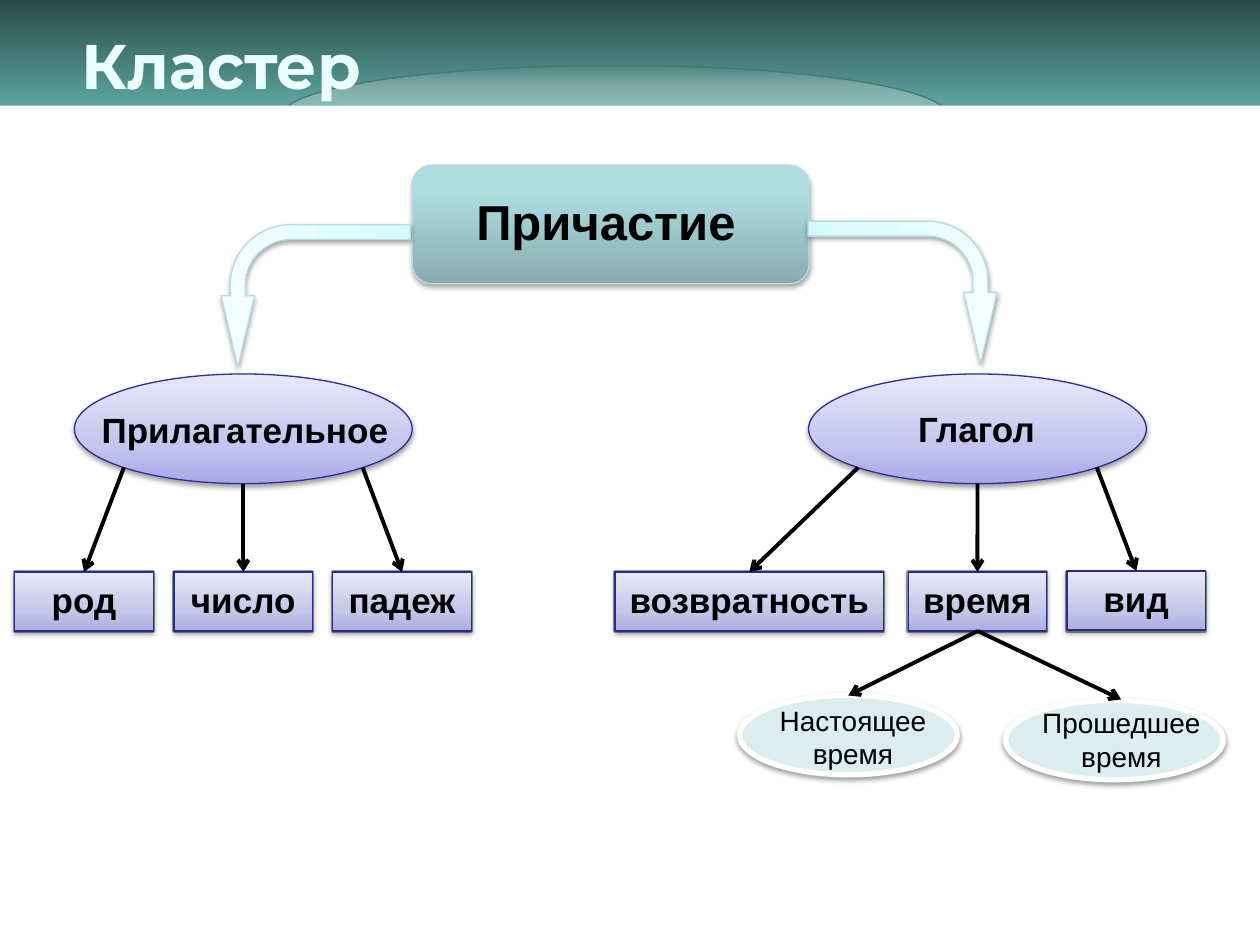
from dataclasses import dataclass
from math import sqrt

from lxml import etree
from pptx import Presentation
from pptx import util as u
from pptx.dml.color import RGBColor
from pptx.enum import shapes, text
from pptx.oxml.ns import qn

Cm, Pt = u.Cm, u.Pt
G = shapes.MSO_SHAPE


@dataclass(frozen=True)
class Theme:
    white: str = "FFFFFF"
    ink: str = "000000"
    title: str = "EBFFFF"
    body_font: str = "Arial"
    title_font: str = "Montserrat"
    title_size: float = 36
    root_size: float = 28
    node_size: float = 20
    leaf_size: float = 16
    banner: tuple = ((0, "2A4C49"), (100, "5CA49D"))
    glow: tuple = ((0, "49837D"), (50, "FFFFFF", 15), (100, "49837D"))
    glow_line: str = "457B76"
    root: tuple = ((0, "87ABAE"), (80, "AFDEE2"), (100, "AFE0E4"))
    pale_line: str = "B6DCDF"
    oval: tuple = ((0, "A9A9E9"), (35, "C4C4EF"), (100, "E8E8FA"))
    oval_line: str = "2F2F98"
    box: tuple = ((0, "ADADE1"), (35, "C6C6E9"), (100, "E9E9F7"))
    box_line: str = "2A2A89"
    back: str = "BBE0E3"
    back_line: str = "8AA6A8"
    leaf: str = "DAEDEF"
    arrow: tuple = ((0, "D3FBFF"), (35, "DFFCFF"), (100, "F2FEFF"))


T = Theme()
OVAL_Y, OVAL_W, OVAL_H = 7.54, 6.81, 2.21
BOX_Y, BOX_W, BOX_H = 11.53, 2.79, 1.19


def sub(parent, tag, **attrs):
    el = etree.SubElement(parent, qn(tag))
    for key, value in attrs.items():
        el.set(key, str(value))
    return el


def add_color(parent, rgb, opacity=100):
    clr = sub(parent, "a:srgbClr", val=rgb)
    if opacity < 100:
        sub(clr, "a:alpha", val=opacity * 1000)


def set_gradient(sp, stops, angle):
    sp.fill.gradient()
    grad = sp.element.spPr.find(qn("a:gradFill"))
    for child in list(grad):
        grad.remove(child)
    grad.set("rotWithShape", "1")
    stop_list = sub(grad, "a:gsLst")
    for pos, *color in stops:
        add_color(sub(stop_list, "a:gs", pos=pos * 1000), *color)
    sub(grad, "a:lin", ang=angle * 60000, scaled=0)


def add_shape(s, kind, at, fill, line=None, width=0.75, angle=270, shadow=None):
    sp = s.shapes.add_shape(kind, *map(Cm, at))
    if isinstance(fill, str):
        sp.fill.solid()
        sp.fill.fore_color.rgb = RGBColor.from_string(fill)
    else:
        set_gradient(sp, fill, angle)
    if line:
        sp.line.color.rgb = RGBColor.from_string(line)
        sp.line.width = Pt(width)
    else:
        sp.line.fill.background()
    sp.shadow.inherit = False
    if shadow:
        opacity, distance = shadow
        effects = sp.element.spPr.find(qn("a:effectLst"))
        outer = sub(effects, "a:outerShdw", blurRad=Pt(3.1), dist=Pt(distance),
                    dir=90 * 60000, rotWithShape=0)
        add_color(outer, T.ink, opacity)
    return sp


def write(sp, words, size, bold=True, font=T.body_font, color=T.ink):
    tf = sp.text_frame
    frame = {"word_wrap": True, "vertical_anchor": text.MSO_ANCHOR.TOP,
             "auto_size": text.MSO_AUTO_SIZE.NONE,
             "margin_left": Cm(0.2), "margin_right": Cm(0.2),
             "margin_top": Cm(0.13), "margin_bottom": Cm(0.13)}
    for key, value in frame.items():
        setattr(tf, key, value)
    p = tf.paragraphs[0]
    p.alignment = text.PP_ALIGN.CENTER
    r = p.add_run()
    r.text = words
    for key, value in {"name": font, "size": Pt(size), "bold": bold}.items():
        setattr(r.font, key, value)
    r.font.color.rgb = RGBColor.from_string(color)


def add_label(s, words, at, size, bold=True):
    write(s.shapes.add_textbox(*map(Cm, at)), words, size, bold)


def add_arrow(s, start, end):
    c = s.shapes.add_connector(shapes.MSO_CONNECTOR.STRAIGHT, *map(Cm, start + end))
    c.line.color.rgb = RGBColor.from_string(T.ink)
    c.line.width = Pt(2.25)
    sub(c.element.spPr.find(qn("a:ln")), "a:tailEnd", type="arrow")
    sub(c.element.spPr, "a:effectLst")


def add_header(s):
    add_shape(s, G.RECTANGLE, (0, 0, 25.4, 2.13), T.banner, angle=90)
    add_shape(s, G.OVAL, (5.69, 1.32, 13.41, 2.01), T.glow, T.glow_line, angle=90)
    add_shape(s, G.RECTANGLE, (0, 2.13, 25.4, 16.92), T.white)
    title = s.shapes.title
    title.element.getparent().append(title.element)
    place = {"left": 1.26, "top": 0.41, "width": 6.4, "height": 1.6}
    for key, value in place.items():
        setattr(title, key, Cm(value))
    write(title, "Кластер", T.title_size, font=T.title_font, color=T.title)


def add_bent_arrow(s, left, top, rotation, flip=False):
    sp = add_shape(s, G.BENT_ARROW, (left, top, 2.87, 3.81), T.arrow,
                   T.pale_line, shadow=(38, 1.6))
    for i, value in enumerate((0.105, 0.117, 0.5, 0.425)):
        sp.adjustments[i] = value
    sp.rotation = rotation
    if flip:
        sp.element.spPr.xfrm.set("flipH", "1")


def add_box(s, words, left, width=BOX_W, top=BOX_Y):
    add_shape(s, G.RECTANGLE, (left, BOX_Y, width, BOX_H), T.back, T.back_line, 2)
    sp = add_shape(s, G.RECTANGLE, (left, top, width, BOX_H), T.box, T.box_line,
                   shadow=(38, 1.6))
    write(sp, words, T.node_size)
    return left + width / 2, top


def add_branch(s, words, left, label_at, boxes):
    add_shape(s, G.OVAL, (left, OVAL_Y, OVAL_W, OVAL_H), T.oval, T.oval_line,
              shadow=(38, 1.6))
    add_label(s, words, label_at, T.node_size)
    tips = [add_box(s, *box) for box in boxes]
    cx, cy = left + OVAL_W / 2, OVAL_Y + OVAL_H / 2
    dx, dy = OVAL_W / 2 / sqrt(2), OVAL_H / 2 / sqrt(2)
    starts = (cx - dx, cy + dy), (cx, cy + OVAL_H / 2), (cx + dx, cy + dy)
    for start, tip in zip(starts, tips):
        add_arrow(s, start, tip)


def add_leaf(s, words, at, label_at, start, tip):
    add_shape(s, G.OVAL, at + (4.39, 1.6), T.leaf, T.white, 3, shadow=(38, 1.6))
    add_label(s, words, label_at + (3.81, 1.7), T.leaf_size, bold=False)
    add_arrow(s, start, tip)


def main():
    prs = Presentation()
    prs.slide_width, prs.slide_height = Cm(25.4), Cm(19.05)
    s = prs.slides.add_slide(prs.slide_layouts[5])
    add_header(s)

    add_shape(s, G.ROUNDED_RECTANGLE, (8.31, 3.33, 8, 2.39), T.root, T.pale_line,
              shadow=(35, 1.8))
    add_label(s, "Причастие", (8.71, 3.73, 7.01, 1.45), T.root_size)
    add_bent_arrow(s, 4.93, 4.06, 270, flip=True)
    add_bent_arrow(s, 16.76, 3.99, 90)

    add_branch(s, "Прилагательное", 1.5, (1.78, 8.1, 6.32, 1.12),
               [("род", 0.3), ("число", 3.51), ("падеж", 6.71)])
    add_branch(s, "Глагол", 16.3, (16.89, 8.08, 5.59, 1.12),
               [("возвратность", 12.4, 5.41), ("время", 18.31),
                ("вид", 21.51, BOX_W, 11.51)])

    fork = (19.71, BOX_Y + BOX_H)
    add_leaf(s, "Настоящее время", (14.91, 14.02), (15.29, 14.05), fork, (17.1, 14.02))
    add_leaf(s, "Прошедшее время", (20.27, 14.12), (20.7, 14.1), fork, (22.6, 14.1))
    prs.save("out.pptx")


if __name__ == "__main__":
    main()
